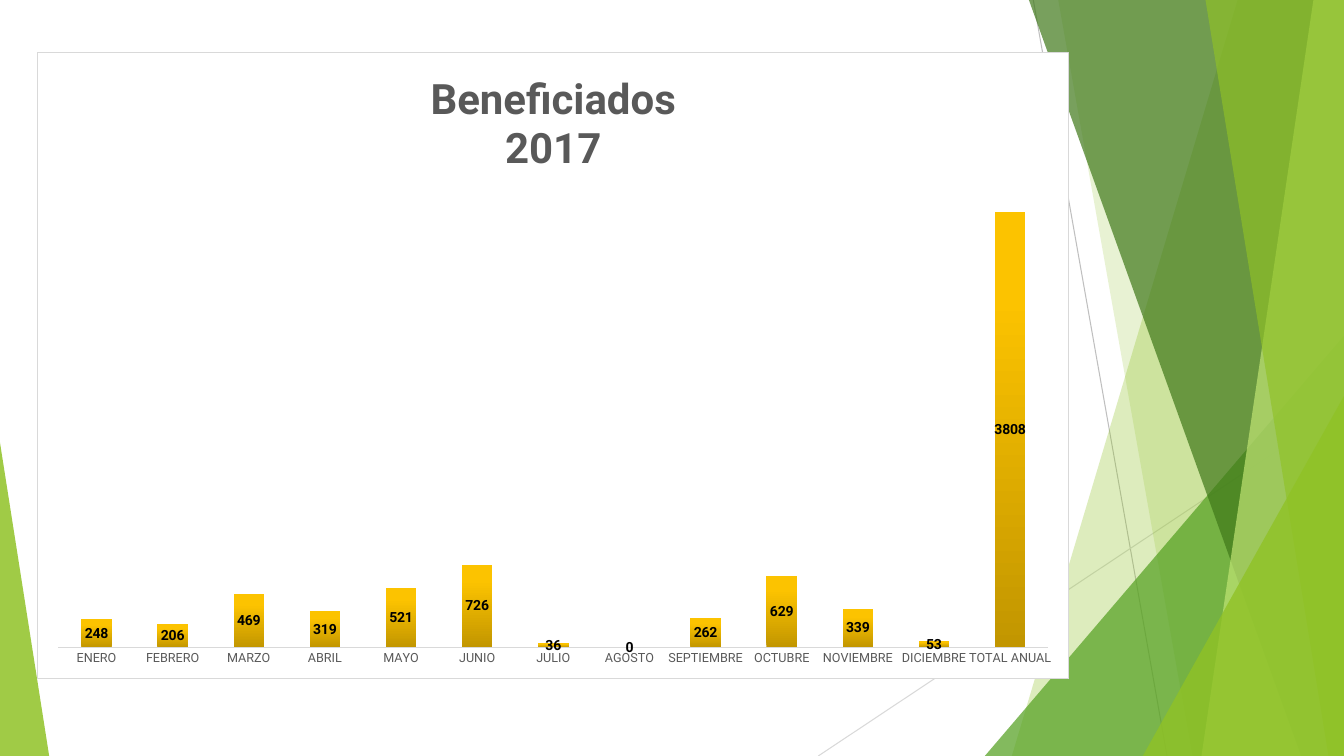
from dataclasses import dataclass

import lxml.etree
import pptx
import pptx.chart.chart
import pptx.chart.data
import pptx.dml.color
import pptx.dml.fill
import pptx.enum.chart
import pptx.enum.shapes
import pptx.oxml
import pptx.oxml.ns
import pptx.slide
import pptx.text.text
import pptx.util

WIDTH, HEIGHT = 33.87, 19.05
FONT = "Roboto"
COLORS = {
    "white": "FFFFFF",
    "black": "000000",
    "text": "595959",
    "border": "D9D9D9",
    "line": "BFBFBF",
    "lime": "90C226",
    "green": "54A021",
    "forest": "3F7819",
    "pale": "C0E474",
}
BAR_GRADIENT = ((0, "C29600"), (80, "FCC300"), (100, "FDC400"))
BENEFICIARIES = {
    "ENERO": 248, "FEBRERO": 206, "MARZO": 469, "ABRIL": 319, "MAYO": 521,
    "JUNIO": 726, "JULIO": 36, "AGOSTO": 0, "SEPTIEMBRE": 262,
    "OCTUBRE": 629, "NOVIEMBRE": 339, "DICIEMBRE": 53, "TOTAL ANUAL": 3808,
}
NAMESPACES = pptx.oxml.ns.nsdecls("a", "c")


@dataclass(frozen=True)
class Ray:
    start: tuple[float, float]
    end: tuple[float, float]
    color: str


@dataclass(frozen=True)
class Band:
    top_left: float
    bottom_left: float
    color: str
    opacity: int


@dataclass(frozen=True)
class Triangle:
    left: float
    top: float
    width: float
    apex: float
    color: str
    opacity: int


RAYS = (
    Ray((26.04, 0), (29.41, HEIGHT), "line"),
    Ray((WIDTH, 10.24), (20.62, HEIGHT), "border"),
)
FACETS = (
    Band(31.19, 25.5, "lime", 30),
    Band(26.67, 30.05, "lime", 20),
    Triangle(24.82, 8.46, 9.05, 1, "green", 72),
    Band(25.93, 32.79, "forest", 70),
    Band(33.1, 30.28, "pale", 70),
    Band(30.38, 33.48, "lime", 65),
    Triangle(28.8, 9.98, 5.07, 1, "lime", 80),
    Triangle(0, 11.15, 1.24, 0, "lime", 85),
)


def rgb(name: str) -> pptx.dml.color.RGBColor:
    return pptx.dml.color.RGBColor.from_string(COLORS[name])


def style_font(font: pptx.text.text.Font, size: float, color: str, bold: bool = False) -> None:
    font.name = FONT
    font.size = pptx.util.Pt(size)
    font.bold = bold
    font.color.rgb = rgb(color)


def fill_translucent(fill: pptx.dml.fill.FillFormat, facet: Band | Triangle, shape) -> None:
    fill.solid()
    fill.fore_color.rgb = rgb(facet.color)
    color = shape.element.spPr.find(".//" + pptx.oxml.ns.qn("a:srgbClr"))
    alpha = lxml.etree.SubElement(color, pptx.oxml.ns.qn("a:alpha"))
    alpha.set("val", str(facet.opacity * 1000))


def draw_ray(slide: pptx.slide.Slide, ray: Ray) -> None:
    connector = slide.shapes.add_connector(
        pptx.enum.shapes.MSO_CONNECTOR.STRAIGHT,
        *(pptx.util.Cm(value) for value in ray.start + ray.end),
    )
    connector.line.color.rgb = rgb(ray.color)
    connector.line.width = pptx.util.Pt(0.75)
    lxml.etree.SubElement(connector.element.spPr, pptx.oxml.ns.qn("a:effectLst"))


def draw_facet(slide: pptx.slide.Slide, facet: Band | Triangle) -> None:
    if isinstance(facet, Band):
        corners = [(facet.top_left, 0), (WIDTH, 0), (WIDTH, HEIGHT), (facet.bottom_left, HEIGHT)]
        points = [(pptx.util.Cm(x), pptx.util.Cm(y)) for x, y in corners]
        builder = slide.shapes.build_freeform(*points[0])
        builder.add_line_segments(points[1:], close=True)
        shape = builder.convert_to_shape()
    else:
        shape = slide.shapes.add_shape(
            pptx.enum.shapes.MSO_SHAPE.ISOSCELES_TRIANGLE,
            pptx.util.Cm(facet.left),
            pptx.util.Cm(facet.top),
            pptx.util.Cm(facet.width),
            pptx.util.Cm(HEIGHT - facet.top),
        )
        shape.adjustments[0] = facet.apex
    shape.shadow.inherit = False
    fill_translucent(shape.fill, facet, shape)
    shape.line.fill.background()


def write_title(chart: pptx.chart.chart.Chart) -> None:
    chart.has_title = True
    chart.chart_title.include_in_layout = False
    frame = chart.chart_title.text_frame
    for index, text in enumerate(("Beneficiados", "2017")):
        paragraph = frame.add_paragraph() if index else frame.paragraphs[0]
        run = paragraph.add_run()
        run.text = text
        style_font(run.font, 30, "text", bold=True)


def style_axes(chart: pptx.chart.chart.Chart) -> None:
    months = chart.category_axis
    months.major_tick_mark = pptx.enum.chart.XL_TICK_MARK.NONE
    months.has_major_gridlines = False
    style_font(months.tick_labels.font, 9, "text")
    months.format.line.color.rgb = rgb("border")
    months.format.line.width = pptx.util.Pt(1)
    values = chart.value_axis
    values.visible = False
    values.has_major_gridlines = False
    values.minimum_scale = 0
    values.maximum_scale = 4000


def style_bars(chart: pptx.chart.chart.Chart) -> None:
    plot = chart.plots[0]
    plot.gap_width = 150
    plot.overlap = 100
    plot.vary_by_categories = False
    series = plot.series[0]
    stops = "".join(
        f'<a:gs pos="{position * 1000}"><a:srgbClr val="{color}"/></a:gs>'
        for position, color in BAR_GRADIENT
    )
    series.format.fill.background()
    properties = series.format.fill._xPr
    properties.replace(properties[0], pptx.oxml.parse_xml(
        f'<a:gradFill {NAMESPACES}><a:gsLst>{stops}</a:gsLst>'
        '<a:lin ang="16200000" scaled="0"/></a:gradFill>'
    ))
    labels = series.data_labels
    labels.show_value = True
    labels.position = pptx.enum.chart.XL_LABEL_POSITION.CENTER
    style_font(labels.font, 10, "black", bold=True)


def frame_chart(chart: pptx.chart.chart.Chart) -> None:
    plot_area = chart.element.chart.plotArea
    for layout in plot_area.findall(pptx.oxml.ns.qn("c:layout")):
        plot_area.remove(layout)
    edges = "".join(
        f'<c:{name} val="{value}"/>'
        for name, value in (("x", 0.02), ("y", 0.22), ("w", 0.96), ("h", 0.73))
    )
    plot_area.insert(0, pptx.oxml.parse_xml(
        f'<c:layout {NAMESPACES}><c:manualLayout><c:layoutTarget val="inner"/>'
        f'<c:xMode val="edge"/><c:yMode val="edge"/>{edges}</c:manualLayout></c:layout>'
    ))
    chart.element.chart.addnext(pptx.oxml.parse_xml(
        f'<c:spPr {NAMESPACES}><a:solidFill><a:srgbClr val="{COLORS["white"]}"/></a:solidFill>'
        f'<a:ln w="9525"><a:solidFill><a:srgbClr val="{COLORS["border"]}"/></a:solidFill></a:ln></c:spPr>'
    ))


def draw_chart(slide: pptx.slide.Slide) -> None:
    data = pptx.chart.data.CategoryChartData()
    data.categories = list(BENEFICIARIES)
    data.add_series("Series 1", list(BENEFICIARIES.values()))
    chart = slide.shapes.add_chart(
        pptx.enum.chart.XL_CHART_TYPE.COLUMN_STACKED,
        *(pptx.util.Cm(value) for value in (0.94, 1.32, 26.01, 15.8)),
        data,
    ).chart
    style_font(chart.font, 10, "black")
    chart.has_legend = False
    write_title(chart)
    style_axes(chart)
    style_bars(chart)
    frame_chart(chart)


def main() -> None:
    presentation = pptx.Presentation()
    presentation.slide_width = pptx.util.Cm(WIDTH)
    presentation.slide_height = pptx.util.Cm(HEIGHT)
    slide = presentation.slides.add_slide(presentation.slide_layouts[6])
    for ray in RAYS:
        draw_ray(slide, ray)
    for facet in FACETS:
        draw_facet(slide, facet)
    draw_chart(slide)
    presentation.save("out.pptx")


if __name__ == "__main__":
    main()
